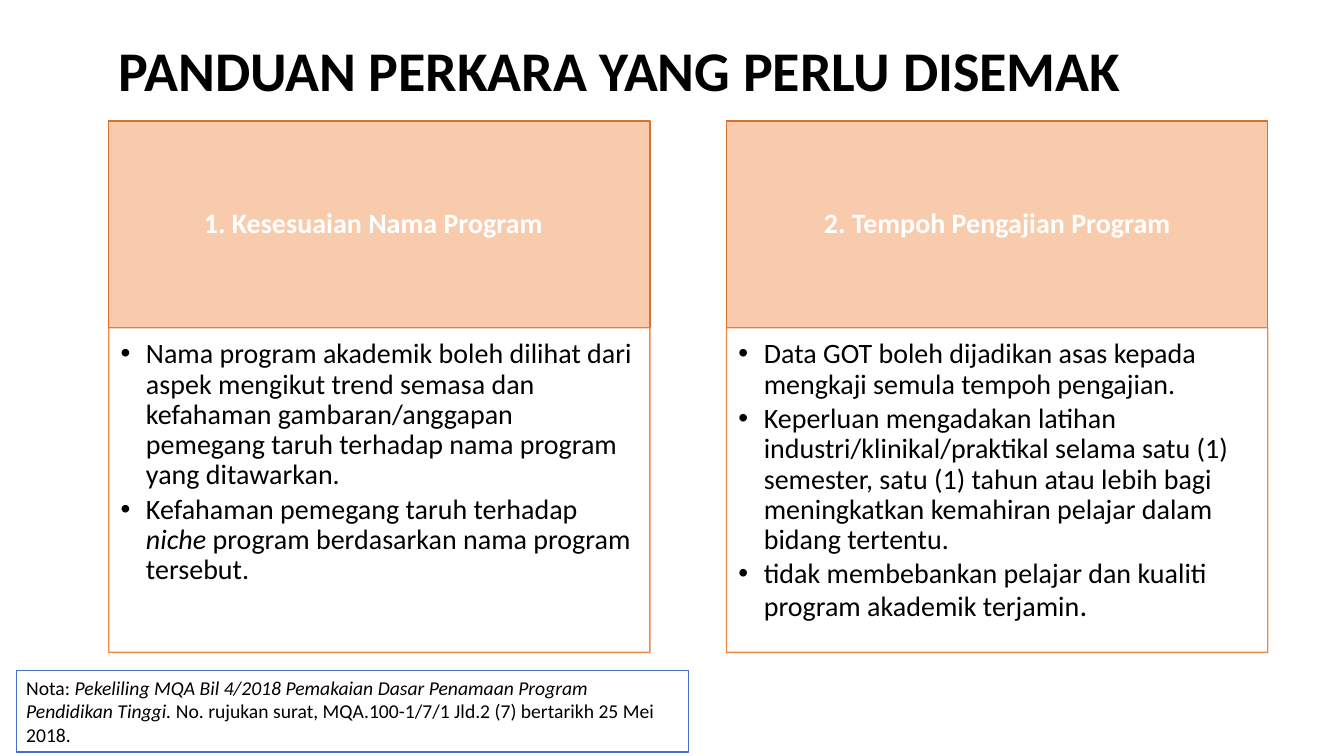
from pptx import Presentation
from pptx.dml.color import RGBColor
from pptx.enum.shapes import MSO_SHAPE
from pptx.enum.text import MSO_ANCHOR, PP_ALIGN
from pptx.oxml.ns import qn
from pptx.util import Cm, Pt
from lxml import etree

RECT = MSO_SHAPE.RECTANGLE
TOP, MIDDLE = MSO_ANCHOR.TOP, MSO_ANCHOR.MIDDLE
LEFT, CENTER = PP_ALIGN.LEFT, PP_ALIGN.CENTER

BLACK, WHITE = "000000", "FFFFFF"
PEACH, RUST, ORANGE, BLUE = "F8CBAD", "D7712C", "ED7D31", "4472C4"

X, STEP, WIDTH = 2.74, 15.57, 13.64
HEAD_Y, HEAD_H = 3.05, 5.21
BODY_Y, BODY_H = HEAD_Y + HEAD_H, 8.18
PAD = (0.25, 0.13, 0.25, 0.13)

# A paragraph is a list of runs: (text, format values)
COLUMNS = [
    (
        [("1. Kesesuaian Nama Program ", {}), (" ", {"size": Pt(18)})],
        [
            [("Nama program akademik boleh dilihat dari aspek mengikut trend "
              "semasa dan kefahaman gambaran/anggapan pemegang taruh terhadap "
              "nama program yang ditawarkan.", {})],
            [("Kefahaman pemegang taruh terhadap ", {}),
             ("niche", {"italic": True}),
             (" program berdasarkan nama program tersebut.", {})],
        ],
    ),
    (
        [("2. Tempoh Pengajian Program", {})],
        [
            [("Data GOT boleh dijadikan asas kepada mengkaji semula tempoh "
              "pengajian.", {})],
            [("Keperluan mengadakan latihan industri/klinikal/praktikal selama "
              "satu (1) semester, satu (1) tahun atau lebih bagi meningkatkan "
              "kemahiran pelajar dalam bidang tertentu.", {})],
            [("tidak membebankan pelajar dan kualiti program akademik terjamin",
              {}), (".", {"size": Pt(22)})],
        ],
    ),
]
NOTE = [
    ("Nota: ", {}),
    ("Pekeliling MQA Bil 4/2018 Pemakaian Dasar Penamaan Program "
     "Pendidikan Tinggi.", {"italic": True}),
    (" No. rujukan surat, MQA.100-1/7/1 Jld.2 (7) bertarikh 25 Mei 2018.", {}),
]


def color(code):
    return RGBColor.from_string(code)


def fade(fill, percent):
    """Set the opacity of a solid fill."""
    tone = fill._xPr.find(qn("a:solidFill"))[0]
    etree.SubElement(tone, qn("a:alpha"), val=str(percent * 1000))


def bullet(para):
    props = para._p.get_or_add_pPr()
    props.set("marL", str(Cm(0.64)))
    props.set("indent", str(-Cm(0.64)))
    etree.SubElement(props, qn("a:buFont"), typeface="Arial")
    etree.SubElement(props, qn("a:buChar"), char="•")


class Page:
    """Holds the text style and the current slide."""

    font = "Calibri"

    def __init__(self, deck):
        self.slide = deck.slides.add_slide(deck.slide_layouts[6])

    def put_text(self, shape, paras, size, tone=BLACK, bold=False, anchor=TOP,
                 align=LEFT, pad=PAD, after=0, lines=0.9, dots=False):
        frame = shape.text_frame
        sides = ("margin_left", "margin_top", "margin_right", "margin_bottom")
        form = dict(zip(sides, map(Cm, pad)))
        form.update(word_wrap=True, vertical_anchor=anchor)
        for key, value in form.items():
            setattr(frame, key, value)
        for i, runs in enumerate(paras):
            para = frame.add_paragraph() if i else frame.paragraphs[0]
            layout = {"alignment": align, "line_spacing": lines,
                      "space_after": Pt(after)}
            for key, value in layout.items():
                setattr(para, key, value)
            if dots:
                bullet(para)
            for text, extra in runs:
                run = para.add_run()
                run.text = text
                run.font.color.rgb = color(tone)
                style = {"name": self.font, "size": Pt(size), "bold": bold}
                for key, value in {**style, **extra}.items():
                    setattr(run.font, key, value)

    def label(self, box, paras, size, **form):
        shape = self.slide.shapes.add_textbox(*map(Cm, box))
        self.put_text(shape, paras, size, **form)

    def panel(self, box, fill, line, paras, size, alpha=100, **form):
        shape = self.slide.shapes.add_shape(RECT, *map(Cm, box))
        shape.shadow.inherit = False
        shape.line.width = Pt(1)
        for paint, code in ((shape.fill, fill), (shape.line.fill, line)):
            paint.solid()
            paint.fore_color.rgb = color(code)
            if alpha < 100:
                fade(paint, alpha)
        self.put_text(shape, paras, size, **form)


def main():
    deck = Presentation()
    deck.slide_width, deck.slide_height = Cm(33.87), Cm(19.05)
    page = Page(deck)
    page.label((X, 0, 29.21, 3.68),
               [[("PANDUAN PERKARA YANG PERLU DISEMAK", {})]], 40,
               bold=True, anchor=MIDDLE)
    for i, (head, points) in enumerate(COLUMNS):
        left = X + i * STEP
        page.panel((left, HEAD_Y, WIDTH, HEAD_H), PEACH, RUST, [head], 20,
                   tone=WHITE, bold=True, anchor=MIDDLE, align=CENTER,
                   pad=(0.41, 0.23, 0.41, 0.23))
        page.panel((left, BODY_Y, WIDTH, BODY_H), WHITE, ORANGE, points, 20,
                   alpha=90, pad=(0.3, 0.3, 0.41, 0.43), after=3, dots=True)
    page.panel((0.41, 16.89, 16.94, 2.06), WHITE, BLUE, [NOTE], 14, lines=1.0)
    deck.save("out.pptx")


if __name__ == "__main__":
    main()
